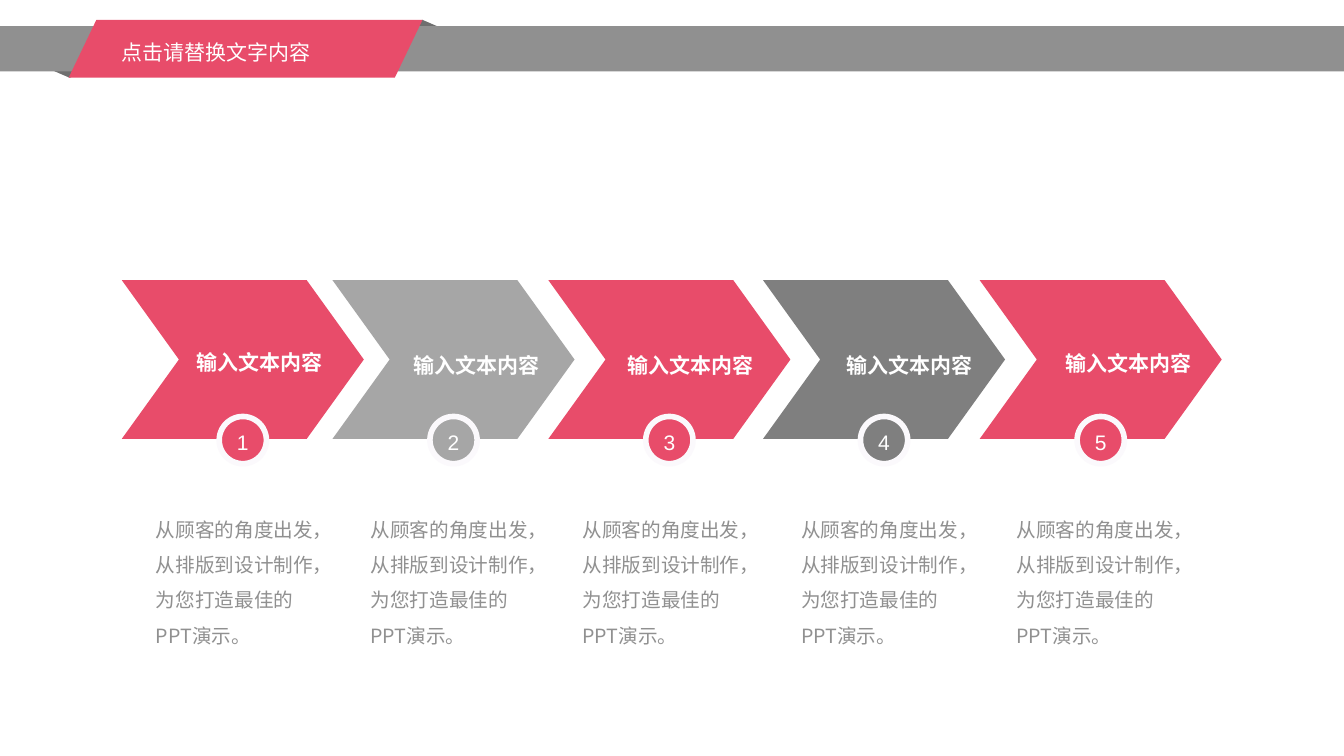
from pptx import Presentation
from pptx.dml.color import RGBColor
from pptx.enum.shapes import MSO_SHAPE
from pptx.enum.text import MSO_ANCHOR, MSO_AUTO_SIZE, PP_ALIGN
from pptx.oxml.xmlchemy import OxmlElement
from pptx.util import Cm, Pt

CHEVRON, OVAL, RECT = MSO_SHAPE.CHEVRON, MSO_SHAPE.OVAL, MSO_SHAPE.RECTANGLE
TRIANGLE, PARALLELOGRAM = MSO_SHAPE.ISOSCELES_TRIANGLE, MSO_SHAPE.PARALLELOGRAM
TOP, MIDDLE = MSO_ANCHOR.TOP, MSO_ANCHOR.MIDDLE
LEFT, CENTER = PP_ALIGN.LEFT, PP_ALIGN.CENTER
NO_FIT = MSO_AUTO_SIZE.NONE
TITLE_ONLY = 5

PINK, SILVER, GREY = "E84C6A", "A6A6A6", "7F7F7F"
BAND, FOLD, WHITE, RING = "909090", "6F6F6F", "FFFFFF", "FBF9FC"
ARIAL, NOTO = "Arial", "Noto Sans CJK SC"

LABEL = "输入文本内容"
DESCRIPTION = "从顾客的角度出发，从排版到设计制作，为您打造最佳的PPT演示。"

# Chevron left, label centre x and y, description left (cm), colour
STEPS = [
    (3.07, 6.55, 9.07, 3.68, PINK),
    (8.38, 12.01, 9.14, 9.09, SILVER),
    (13.82, 17.41, 9.14, 14.43, PINK),
    (19.23, 22.91, 9.14, 19.94, GREY),
    (24.69, 28.44, 9.09, 25.37, PINK),
]
CHEVRON_TOP, CHEVRON_W, CHEVRON_H = 7.06, 6.1, 4
BADGE = 1.19
LABEL_W, LABEL_H = 4.1, 0.76


def rgb(value):
    return RGBColor.from_string(value)


class SlideBuilder:
    def __init__(self, slide):
        self.slide = slide

    def shape(self, kind, left, top, width, height, fill, line=None, adjust=None):
        shape = self.slide.shapes.add_shape(kind, Cm(left), Cm(top), Cm(width), Cm(height))
        shape.shadow.inherit = False
        shape.fill.solid()
        shape.fill.fore_color.rgb = rgb(fill)
        if line:
            shape.line.color.rgb = rgb(line)
            shape.line.width = Pt(4)
        else:
            shape.line.fill.background()
        if adjust is not None:
            shape.adjustments[0] = adjust
        return shape

    def set_text(self, shape, text, size, color, font=ARIAL, bold=False, align=CENTER,
                 anchor=MIDDLE, spacing=1.2, inset=(0, 0)):
        frame = shape.text_frame
        frame.text = text
        frame.word_wrap = True
        frame.auto_size = NO_FIT
        frame.vertical_anchor = anchor
        frame.margin_left = frame.margin_right = Cm(inset[0])
        frame.margin_top = frame.margin_bottom = Cm(inset[1])
        paragraph = frame.paragraphs[0]
        paragraph.alignment = align
        paragraph.line_spacing = spacing
        run = paragraph.runs[0]
        run.font.name = font
        run.font.size = Pt(size)
        run.font.bold = bold
        run.font.color.rgb = rgb(color)
        # East Asian typeface
        east_asian = OxmlElement("a:ea")
        east_asian.set("typeface", NOTO)
        run.font._element.find("{*}latin").addnext(east_asian)

    def text(self, left, top, width, height, text, size, color, **style):
        box = self.slide.shapes.add_textbox(Cm(left), Cm(top), Cm(width), Cm(height))
        self.set_text(box, text, size, color, **style)

    def title(self, left, top, width, height, text, size, color, **style):
        title = self.slide.shapes.title
        title.left, title.top = Cm(left), Cm(top)
        title.width, title.height = Cm(width), Cm(height)
        self.set_text(title, text, size, color, **style)
        # Bring the title in front of the ribbon
        self.slide.shapes._spTree.append(title._element)


def main():
    deck = Presentation()
    deck.slide_width, deck.slide_height = Cm(33.87), Cm(19.05)
    page = SlideBuilder(deck.slides.add_slide(deck.slide_layouts[TITLE_ONLY]))
    paragraph_style = dict(align=LEFT, anchor=TOP, spacing=1.5, inset=(0.25, 0.13))

    # Ribbon header
    page.shape(TRIANGLE, 9.12, 0.5, 3.05, 0.66, FOLD)
    lower_fold = page.shape(TRIANGLE, 0.23, 1.3, 3.05, 0.66, FOLD)
    lower_fold.rotation = 180
    page.shape(RECT, 0, 0.66, 33.87, 1.14, BAND)
    page.shape(PARALLELOGRAM, 1.73, 0.5, 8.92, 1.46, PINK, adjust=0.48)
    page.title(2.82, 0.56, 6.68, 1.22, "点击请替换文字内容", 15, WHITE, **paragraph_style)

    # Process steps
    for number, (left, label_x, label_y, description_left, color) in enumerate(STEPS, 1):
        page.shape(CHEVRON, left, CHEVRON_TOP, CHEVRON_W, CHEVRON_H, color, adjust=0.36)
        page.text(label_x - LABEL_W / 2, label_y - LABEL_H / 2, LABEL_W, LABEL_H,
                  LABEL, 15, WHITE, bold=True)
        badge = page.shape(OVAL, left + (CHEVRON_W - BADGE) / 2,
                           CHEVRON_TOP + CHEVRON_H - BADGE / 2 + 0.03,
                           BADGE, BADGE, color, line=RING)
        page.set_text(badge, str(number), 15, WHITE)
        page.text(description_left, 12.62, 4.75, 3.84, DESCRIPTION, 14, BAND,
                  font=NOTO, **paragraph_style)

    deck.save("out.pptx")


if __name__ == "__main__":
    main()
